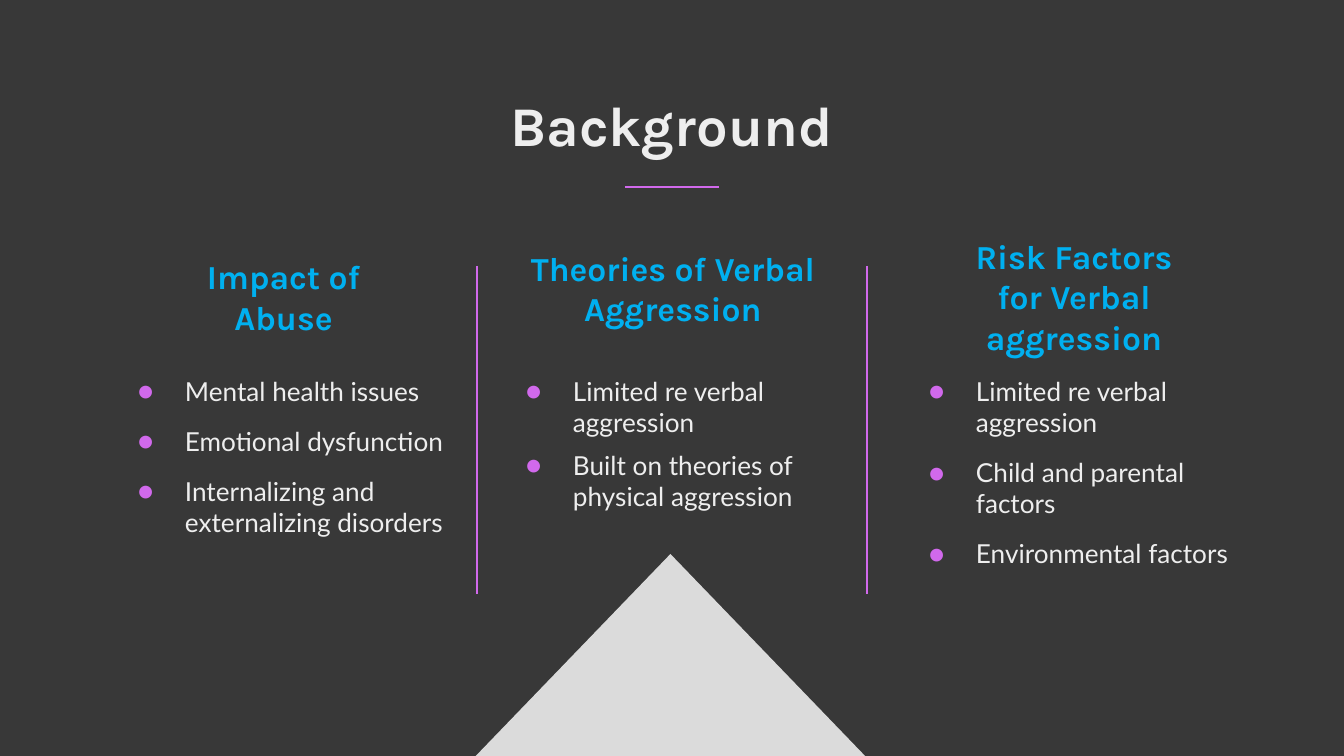
import dataclasses

import lxml.etree
import pptx
import pptx.dml.color
import pptx.enum.shapes
import pptx.enum.text
import pptx.oxml.ns
import pptx.util

PX = 914400 / 134.4
ALIGN = pptx.enum.text.PP_ALIGN
ANCHOR = pptx.enum.text.MSO_ANCHOR


@dataclasses.dataclass(frozen=True)
class Theme:
    background: str = "383838"
    triangle: str = "DBDBDB"
    accent: str = "D169EC"
    heading: str = "00B0F0"
    text: str = "EEEEEE"
    heading_font: str = "Karla"
    body_font: str = "Lato"
    title_size: int = 30
    heading_size: int = 18
    body_size: int = 14
    line_width: float = 1.5


THEME = Theme()
BODY_TOP, BODY_WIDTH = 362, 356

# heading, heading box, body left, body height, items, (space before, between, after)
COLUMNS = [
    ("Impact of Abuse", (173, 266, 221, 61), 105, 206,
     ["Mental health issues", "Emotional dysfunction",
      "Internalizing and externalizing disorders"], (10, 0, 10)),
    ("Theories of Verbal Aggression", (487, 249, 372, 78), 493, 206,
     ["Limited re verbal aggression",
      "Built on theories of physical aggression"], (0, 6, 6)),
    ("Risk Factors for Verbal aggression", (939, 266, 270, 61), 896, 233,
     ["Limited re verbal aggression", "Child and parental factors",
      "Environmental factors"], (10, 0, 10)),
]


def px(n):
    return pptx.util.Emu(round(n * PX))


def rgb(color):
    return pptx.dml.color.RGBColor.from_string(color)


def sub(parent, tag, **attrs):
    return lxml.etree.SubElement(parent, pptx.oxml.ns.qn(tag), attrs)


def add_bullet(p):
    pPr = p._p.get_or_add_pPr()
    pPr.set("marL", str(px(67)))
    pPr.set("indent", str(px(-47)))
    sub(sub(pPr, "a:buClr"), "a:srgbClr", val=THEME.accent)
    sub(pPr, "a:buFont", typeface=THEME.body_font)
    sub(pPr, "a:buChar", char="●")


def add_text(s, box, lines, *, font, size, color, bold=False, align=ALIGN.LEFT,
             anchor=ANCHOR.TOP, bullets=False, spacing=(0, 0, 0)):
    """Add one paragraph per line; spacing is before, between and after, in points."""
    tf = s.shapes.add_textbox(*map(px, box)).text_frame
    tf.word_wrap = True
    tf.vertical_anchor = anchor
    tf.margin_left = tf.margin_right = tf.margin_top = tf.margin_bottom = px(13)
    before, between, after = spacing
    for i, line in enumerate(lines):
        p = tf.add_paragraph() if i else tf.paragraphs[0]
        p.alignment = align
        p.space_before = pptx.util.Pt(before if i else 0)
        p.space_after = pptx.util.Pt(after if i == len(lines) - 1 else between)
        if bullets:
            add_bullet(p)
        r = p.add_run()
        r.text = line
        r.font.name = font
        r.font.size = pptx.util.Pt(size)
        r.font.bold = bold
        r.font.color.rgb = rgb(color)


def add_line(s, x1, y1, x2, y2):
    line = s.shapes.add_connector(
        pptx.enum.shapes.MSO_CONNECTOR.STRAIGHT, *map(px, (x1, y1, x2, y2)))
    line.line.color.rgb = rgb(THEME.accent)
    line.line.width = pptx.util.Pt(THEME.line_width)
    sub(line._element.spPr, "a:effectLst")


def add_triangle(s, box):
    sp = s.shapes.add_shape(
        pptx.enum.shapes.MSO_SHAPE.ISOSCELES_TRIANGLE, *map(px, box))
    sp.shadow.inherit = False
    sp.fill.solid()
    sp.fill.fore_color.rgb = rgb(THEME.triangle)
    sp.line.fill.background()


def add_column(s, heading, box, left, height, items, spacing):
    add_text(s, box, [heading], font=THEME.heading_font, size=THEME.heading_size,
             color=THEME.heading, bold=True, align=ALIGN.CENTER, anchor=ANCHOR.MIDDLE)
    add_text(s, (left, BODY_TOP, BODY_WIDTH, height), items, font=THEME.body_font,
             size=THEME.body_size, color=THEME.text, bullets=True, spacing=spacing)


def main():
    prs = pptx.Presentation()
    prs.slide_width, prs.slide_height = px(1344), px(756)
    s = prs.slides.add_slide(prs.slide_layouts[6])
    s.background.fill.solid()
    s.background.fill.fore_color.rgb = rgb(THEME.background)

    add_triangle(s, (470, 554, 401, 208))
    add_text(s, (290, 78, 763, 78), ["Background"], font=THEME.heading_font,
             size=THEME.title_size, color=THEME.text, bold=True, align=ALIGN.CENTER)
    add_line(s, 625, 187, 719, 187)
    for column in COLUMNS:
        add_column(s, *column)
    for x in (477, 867):
        add_line(s, x, 266, x, 594)
    prs.save("out.pptx")


if __name__ == "__main__":
    main()
